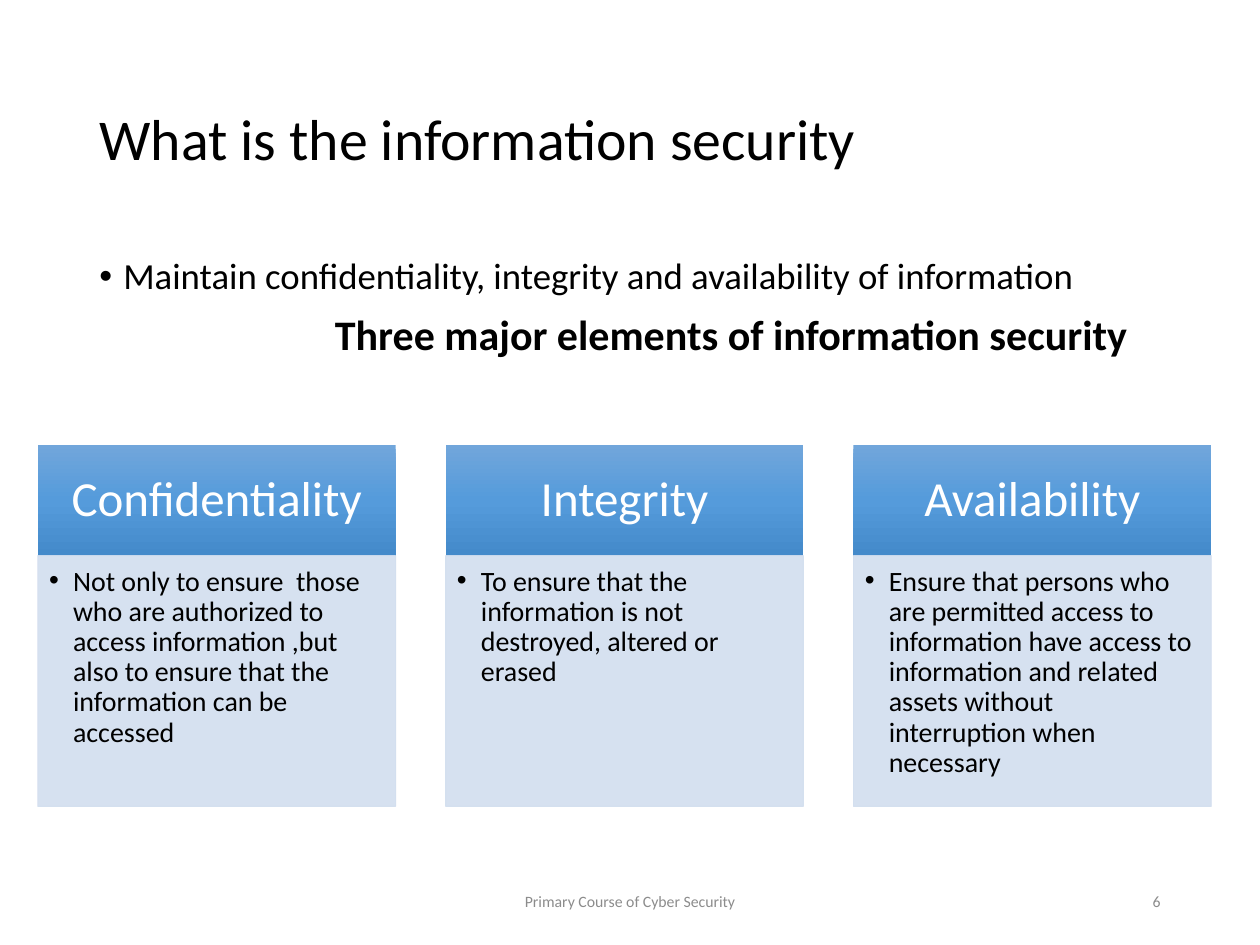
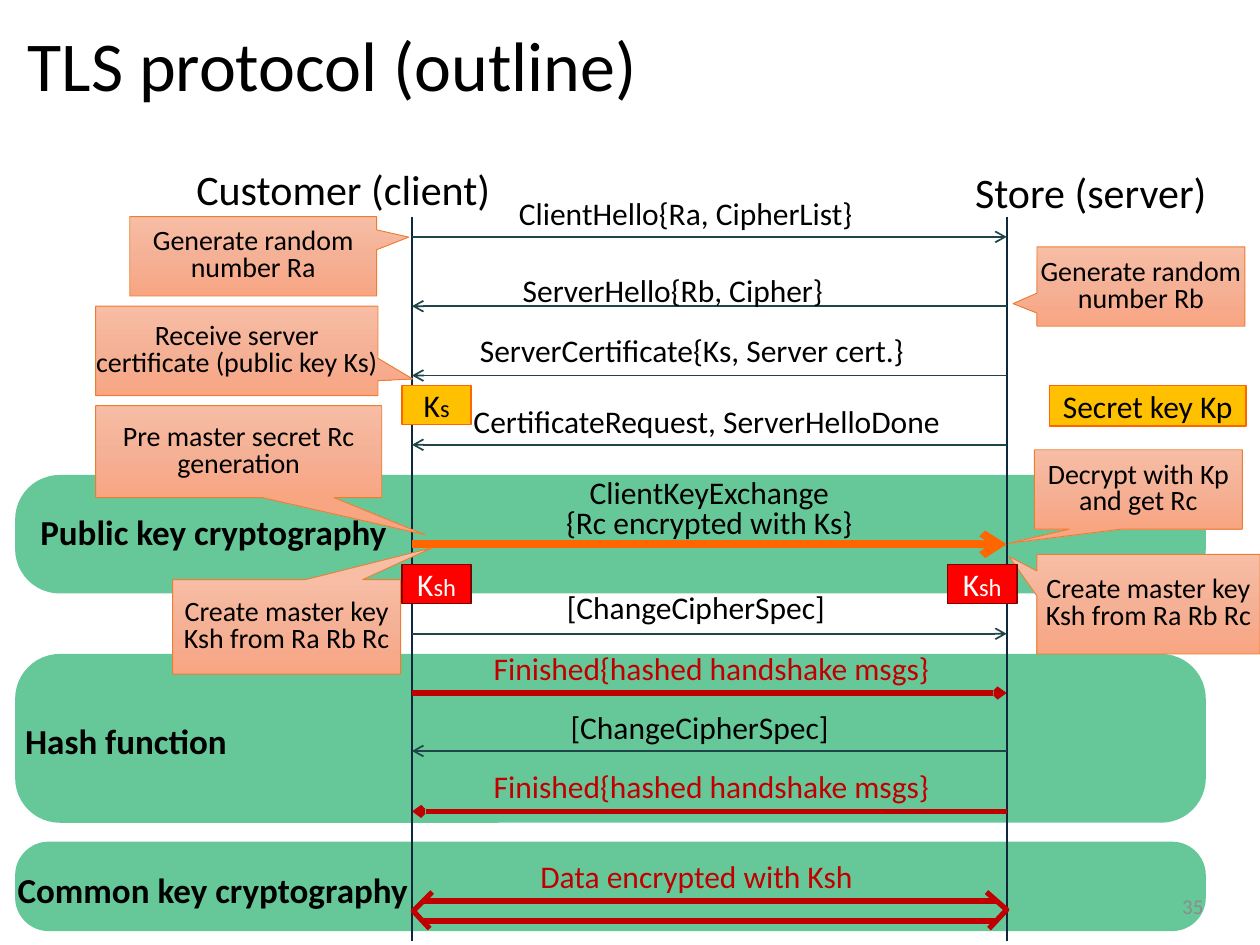
from dataclasses import dataclass
from copy import deepcopy
from lxml.etree import SubElement
from pptx import Presentation
from pptx.dml.color import RGBColor
from pptx.enum.shapes import MSO_CONNECTOR, MSO_SHAPE
from pptx.enum.text import MSO_ANCHOR, MSO_AUTO_SIZE, PP_ALIGN
from pptx.oxml.ns import qn
from pptx.util import Inches, Pt

FONT = "Calibri"
BLACK, WHITE, GREY = "000000", "FFFFFF", "8C8C8C"
RED, ORANGE, GOLD = "C00000", "FF6600", "FFC000"
TEAL, NAVY, GREEN, PALE = "1E4649", "0F273D", "66C899", "D2DEEF"
BLUES = ("71A6DB", "559BDB", "448ACA")
PEACH = ("F7BDA5", "F5B196", "F8A582")
LEFT, MID, RIGHT = PP_ALIGN.LEFT, PP_ALIGN.CENTER, PP_ALIGN.RIGHT
INSET = (0.1, 0.05, 0.1, 0.05)
SLIM = (0.1, 0.04, 0.1, 0.04)
NARROW = (0.04, 0.05, 0.04, 0.05)
FLUSH = (0, 0.05, 0, 0.05)
CLIENT, SERVER = 3.27, 7.99


@dataclass
class Pillar:
    name: str
    text: str


@dataclass
class Band:
    name: str
    top: float
    high: float
    bend: float
    label: tuple


@dataclass
class Message:
    text: str
    box: tuple
    y: float = 0
    back: bool = False
    color: str = BLACK
    line: str = TEAL
    width: float = 1
    head: str = "med"


@dataclass
class Callout:
    text: str
    box: tuple
    tip: tuple
    inset: tuple = FLUSH


@dataclass
class Badge:
    text: str
    box: tuple
    small: str = ""
    fill: str = GOLD
    edge: str = ORANGE
    color: str = BLACK


PILLARS = [
    Pillar("Confidentiality", "Not only to ensure  those who are authorized to access "
           "information ,but also to ensure that the information can be accessed"),
    Pillar("Integrity", "To ensure that the information is not destroyed, altered or erased"),
    Pillar("Availability", "Ensure that persons who are permitted access to information have "
           "access to information and related assets without interruption when necessary"),
]
BANDS = [
    Band("Common key cryptography", 6.68, 0.71, 0.376, (0.1, 6.84, 3.2, 0.44)),
    Band("Hash function", 5.19, 1.34, 0.265, (0.16, 5.66, 1.7, 0.44)),
    Band("Public key cryptography", 3.77, 0.94, 0.376, (0.28, 4, 2.85, 0.44)),
]
CHANGE, DONE = "[ChangeCipherSpec]", "Finished{hashed handshake msgs}"
THICK = dict(color=RED, line=RED, width=3, head="sm")
MESSAGES = [
    Message("ClientHello{Ra, CipherList}", (4.02, 1.5, 3.19, 0.38), 1.88),
    Message("ServerHello{Rb, Cipher}", (4.05, 2.11, 2.89, 0.38), 2.43, True),
    Message("ServerCertificate{Ks, Server cert.}", (3.71, 2.59, 3.99, 0.38), 2.98, True),
    Message("CertificateRequest, ServerHelloDone", (3.66, 3.15, 4.34, 0.38), 3.53, True),
    Message("ClientKeyExchange\n{Rc encrypted with Ks}", (4.38, 3.77, 2.5, 0.56), 4.32,
            line=ORANGE, width=4.5),
    Message(CHANGE, (4.4, 4.63, 2.54, 0.38), 5.03),
    Message(DONE, (3.82, 5.11, 4.13, 0.38), 5.5, **THICK),
    Message(CHANGE, (4.43, 5.58, 2.54, 0.38), 5.96, True),
    Message(DONE, (3.82, 6.05, 4.13, 0.38), 6.44, True, **THICK),
    Message("Data encrypted with Ksh", (4.19, 6.76, 2.71, 0.38), color=RED),
]
MASTER = "Create master key Ksh from Ra Rb Rc"
CALLOUTS = [
    Callout("Receive server certificate (public key Ks)", (0.76, 2.43, 2.24, 0.71),
            (0.623, 0.314)),
    Callout(MASTER, (1.37, 4.6, 1.81, 0.75), (0.638, -0.836)),
    Callout("Pre master secret Rc generation", (0.76, 3.22, 2.27, 0.73), (0.652, 0.904)),
    Callout(MASTER, (8.23, 4.4, 1.77, 0.79), (-0.625, -0.479), NARROW),
    Callout("Generate random number Ra", (1.03, 1.72, 1.96, 0.63), (0.63, -0.242), NARROW),
    Callout("Generate random number Rb", (8.23, 1.96, 1.65, 0.63), (-0.615, 0.215)),
    Callout("Decrypt with Kp and get Rc", (8.21, 3.57, 1.65, 0.63), (-0.623, 0.678)),
]
SHARED = dict(small="sh", fill="FF0000", edge="800000", color=WHITE)
BADGES = [
    Badge("K", (7.52, 4.48, 0.55, 0.31), **SHARED),
    Badge("K", (3.19, 4.48, 0.55, 0.31), **SHARED),
    Badge("K", (3.19, 3.06, 0.55, 0.31), "s"),
    Badge("Secret key Kp", (8.33, 3.06, 1.56, 0.32)),
]


def rgb(color: str) -> RGBColor:
    return RGBColor.from_string(color)


def write(shape, text: str, size: float, color=BLACK, bold=False, align=LEFT,
          anchor=MSO_ANCHOR.TOP, inset=INSET, wrap=True, spacing=None,
          before=0, bullet=False, small="") -> None:
    """Fill a shape with text; small is a last run at 14 points."""
    frame = shape.text_frame
    frame.auto_size = MSO_AUTO_SIZE.NONE if wrap else MSO_AUTO_SIZE.SHAPE_TO_FIT_TEXT
    frame.word_wrap = wrap
    frame.vertical_anchor = anchor
    (frame.margin_left, frame.margin_top,
     frame.margin_right, frame.margin_bottom) = map(Inches, inset)
    for i, part in enumerate(text.split("\n")):
        para = frame.add_paragraph() if i else frame.paragraphs[0]
        para.alignment = align
        para.space_before = Pt(before)
        if spacing:
            para.line_spacing = spacing
        if bullet:
            props = para._p.get_or_add_pPr()
            props.set("marL", str(Inches(0.19)))
            props.set("indent", str(Inches(-0.19)))
            SubElement(props, qn("a:buFont")).set("typeface", "Arial")
            SubElement(props, qn("a:buChar")).set("char", "•")
        for words, points in ((part, size), (small, 14)):
            if words:
                run = para.add_run()
                run.text = words
                run.font.name, run.font.size, run.font.bold = FONT, Pt(points), bold
                run.font.color.rgb = rgb(color)


def label(slide, box: tuple, text: str, size: float, **style) -> None:
    write(slide.shapes.add_textbox(*map(Inches, box)), text, size, **style)


def block(slide, kind, box: tuple, fill, edge="", width=0.5, adjust=()):
    """Add a preset shape; a tuple as fill gives a downward gradient."""
    shape = slide.shapes.add_shape(kind, *map(Inches, box))
    shape.shadow.inherit = False
    for i, value in enumerate(adjust):
        shape.adjustments[i] = value
    if isinstance(fill, str):
        shape.fill.solid()
        shape.fill.fore_color.rgb = rgb(fill)
    else:
        shape.fill.gradient()
        shape.fill.gradient_angle = 270
        stops = shape._element.spPr.find(".//" + qn("a:gsLst"))
        stops.insert(1, deepcopy(stops[0]))
        for i, stop in enumerate(shape.fill.gradient_stops):
            stop.position = i / 2
            stop.color.rgb = rgb(fill[i])
    if edge:
        shape.line.color.rgb = rgb(edge)
        shape.line.width = Pt(width)
    else:
        shape.line.fill.background()
    return shape


def fade(shape, percent: int) -> None:
    for node in shape._element.spPr.iter(qn("a:srgbClr")):
        SubElement(node, qn("a:alpha")).set("val", str(percent * 1000))


def rule(slide, start: tuple, end: tuple, color: str, width: float, head="") -> None:
    """Draw a straight line, with an arrow of the given size if head is set."""
    line = slide.shapes.add_connector(MSO_CONNECTOR.STRAIGHT, *map(Inches, start + end))
    line.line.color.rgb = rgb(color)
    line.line.width = Pt(width)
    props = line._element.spPr
    if head:
        tail = SubElement(props.find(qn("a:ln")), qn("a:tailEnd"))
        for key, value in (("type", "arrow"), ("w", head), ("len", head)):
            tail.set(key, value)
    SubElement(props, qn("a:effectLst"))


def chevron(slide, points: list) -> None:
    first, *rest = [tuple(map(Inches, point)) for point in points]
    pen = slide.shapes.build_freeform(*first)
    pen.add_line_segments(rest, close=False)
    shape = pen.convert_to_shape()
    shape.shadow.inherit = False
    shape.fill.background()
    shape.line.color.rgb = rgb(RED)
    shape.line.width = Pt(3)


def start(deck, title: str, box: tuple, size: float):
    """Add a title-only slide with its title in place."""
    slide = deck.slides.add_slide(deck.slide_layouts[5])
    head = slide.shapes.title
    head.left, head.top, head.width, head.height = map(Inches, box)
    write(head, title, size, anchor=MSO_ANCHOR.MIDDLE, spacing=0.9)
    return slide


def footer(slide, box: tuple, text: str, size: float, align) -> None:
    label(slide, box, text, size, color=GREY, align=align, anchor=MSO_ANCHOR.MIDDLE)


def security(deck) -> None:
    slide = start(deck, "What is the information security", (0.69, 0.4, 8.62, 1.45), 33)
    for i, item in enumerate(PILLARS):
        left = 0.3 + i * 3.237
        head = block(slide, MSO_SHAPE.RECTANGLE, (left, 3.53, 2.84, 0.88), BLUES)
        write(head, item.name, 28, color=WHITE, align=MID, anchor=MSO_ANCHOR.MIDDLE,
              inset=(0.22, 0.12, 0.22, 0.12), spacing=0.9)
        body = block(slide, MSO_SHAPE.RECTANGLE, (left, 4.41, 2.84, 1.99), PALE, PALE)
        fade(body, 90)
        write(body, item.text, 16, inset=(0.09, 0.09, 0.12, 0.14), spacing=0.9, bullet=True)
    label(slide, (0.69, 2, 8.62, 0.5),
          "Maintain confidentiality, integrity and availability of information", 21,
          spacing=0.9, before=7.5, bullet=True)
    label(slide, (2.56, 2.4, 6.56, 0.5), "Three major elements of information security",
          24, bold=True, wrap=False)
    footer(slide, (3.31, 6.95, 3.38, 0.4), "Primary Course of Cyber Security", 9, MID)
    footer(slide, (7.06, 6.95, 2.25, 0.4), "6", 9, RIGHT)


def protocol(deck) -> None:
    slide = start(deck, "TLS protocol (outline)", (0.12, 0.09, 7.58, 0.91), 40)
    for band in BANDS:
        block(slide, MSO_SHAPE.ROUNDED_RECTANGLE, (0.12, band.top, 9.45, band.high), GREEN,
              adjust=(band.bend,))
    footer(slide, (7.32, 6.93, 2.33, 0.52), "35", 12, RIGHT)
    for x in (CLIENT, SERVER):
        rule(slide, (x, 1.72), (x, 7.47), NAVY, 1)
    label(slide, (1.46, 1.25, 2.56, 0.5), "Customer (client)", 24, wrap=False)
    label(slide, (7.64, 1.27, 2.13, 0.5), "Store (server)", 24, wrap=False)
    for item in MESSAGES:
        if item.y:
            ends = [(CLIENT, item.y), (SERVER, item.y)]
            if item.back:
                ends.reverse()
            rule(slide, *ends, item.line, item.width, item.head)
        pair = "\n" in item.text
        label(slide, item.box, item.text, 18, color=item.color, inset=SLIM, wrap=False,
              align=MID if pair else LEFT, spacing=0.8 if pair else None)
    for item in CALLOUTS:
        shape = block(slide, MSO_SHAPE.RECTANGULAR_CALLOUT, item.box, PEACH, "ED7D31",
                      adjust=item.tip)
        write(shape, item.text, 16, align=MID, anchor=MSO_ANCHOR.MIDDLE,
              inset=item.inset, spacing=0.8)
    for item in BADGES:
        shape = block(slide, MSO_SHAPE.RECTANGLE, item.box, item.fill, item.edge, 1)
        write(shape, item.text, 18, color=item.color, align=MID, anchor=MSO_ANCHOR.MIDDLE,
              inset=FLUSH, small=item.small)
    for band in BANDS:
        label(slide, band.label, band.name, 20, bold=True, inset=NARROW, wrap=False)
    chevron(slide, [(3.43, 7.08), (3.28, 7.23), (3.41, 7.37)])
    chevron(slide, [(7.83, 7.08), (7.99, 7.22), (7.85, 7.37)])
    for y in (7.15, 7.31):
        rule(slide, (3.35, y), (7.91, y), RED, 3)


def main() -> None:
    deck = Presentation()
    deck.slide_width, deck.slide_height = Inches(10), Inches(7.5)
    security(deck)
    protocol(deck)
    deck.save("out.pptx")


if __name__ == "__main__":
    main()
